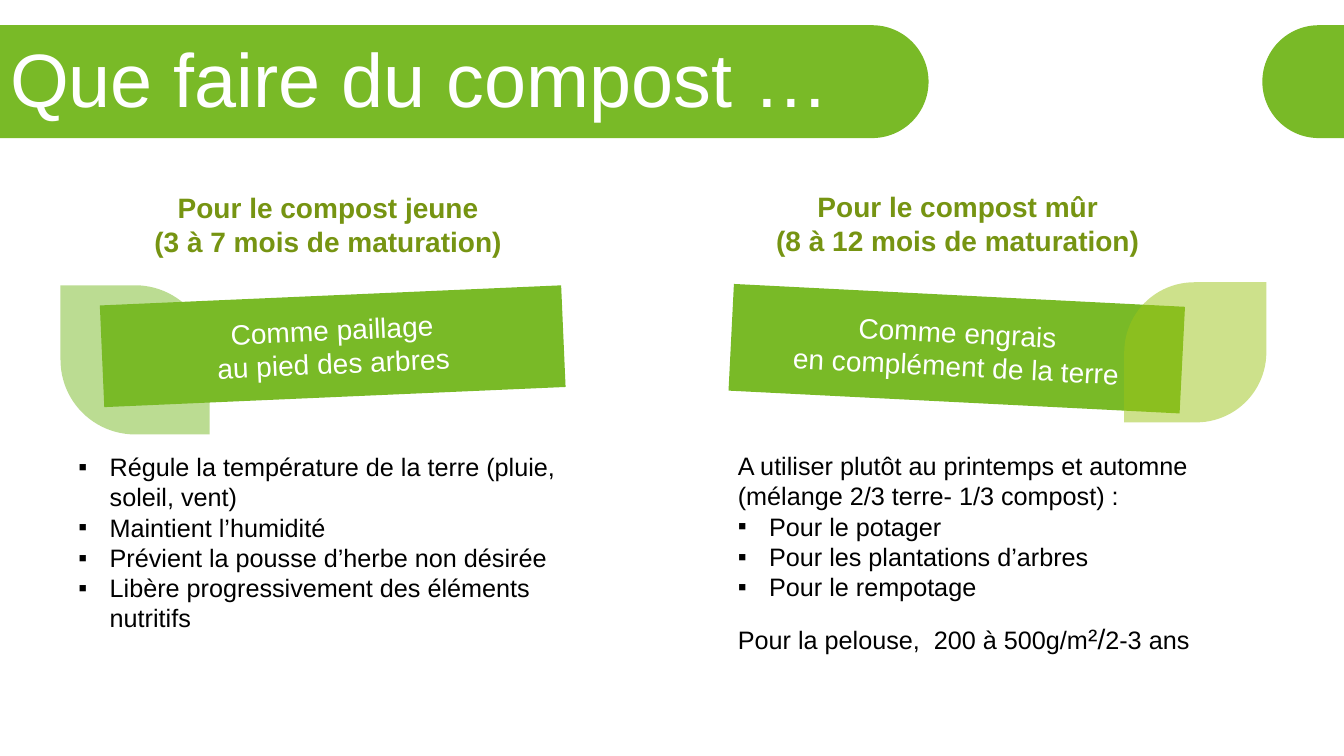
from dataclasses import dataclass
from math import cos, pi, sin

from lxml.etree import SubElement
from pptx import Presentation
from pptx.dml.color import RGBColor
from pptx.enum.shapes import MSO_SHAPE as Preset
from pptx.enum.text import MSO_ANCHOR as Anchor, MSO_AUTO_SIZE as AutoSize, PP_ALIGN as Align
from pptx.oxml.ns import qn
from pptx.util import Inches, Pt


@dataclass(frozen=True)
class Theme:
    """Colours, font and type sizes of the slide."""
    green: str = "79BA27"
    lime: str = "9DC518"
    olive: str = "769412"
    white: str = "FFFFFF"
    black: str = "000000"
    font: str = "Arial"
    title: int = 54
    heading: int = 20
    body: int = 18


THEME = Theme()


def paint(shape, color, opacity=None):
    """Fill a shape without line or shadow, optionally translucent."""
    shape.shadow.inherit = False
    shape.line.fill.background()
    shape.fill.solid()
    shape.fill.fore_color.rgb = RGBColor.from_string(color)
    if opacity:
        color_element = shape.element.spPr.find(qn("a:solidFill"))[0]
        SubElement(color_element, qn("a:alpha"), val=str(opacity * 1000))


def set_bullet(paragraph):
    """Give a paragraph a square bullet and a hanging indent."""
    properties = paragraph._p.get_or_add_pPr()
    properties.set("marL", str(Inches(0.31)))
    properties.set("indent", str(-Inches(0.31)))
    SubElement(properties, qn("a:buFont"), typeface=THEME.font)
    SubElement(properties, qn("a:buChar"), char="▪")


def write(paragraph, text, size=THEME.body, color=THEME.black, bold=False,
          align=Align.LEFT, bullet=False, before=0):
    """Add formatted text to a paragraph."""
    paragraph.alignment = align
    if before:
        paragraph.space_before = Pt(before)
    if bullet:
        set_bullet(paragraph)
    run = paragraph.add_run()
    run.text = text
    run.font.name = THEME.font
    run.font.size = Pt(size)
    run.font.bold = bold
    run.font.color.rgb = RGBColor.from_string(color)


def write_lines(frame, lines, **style):
    """Write one paragraph per line and return the last one."""
    for index, line in enumerate(lines):
        paragraph = frame.add_paragraph() if index else frame.paragraphs[0]
        write(paragraph, line, **style)
    return paragraph


def add_text(slide, left, top, width, height):
    """Add a wrapping text box and return its text frame."""
    frame = slide.shapes.add_textbox(*map(Inches, (left, top, width, height))).text_frame
    frame.word_wrap = True
    return frame


def add_band(slide, flat_x, round_x, top=0.25, height=1.12):
    """Draw a header band from a flat end to a semicircular end."""
    radius = height / 2
    side = 1 if round_x > flat_x else -1
    center_x = round_x - side * radius
    angles = [-pi / 2 + pi * step / 48 for step in range(49)]
    arc = [(Inches(center_x + side * radius * cos(angle)),
            Inches(top + radius + radius * sin(angle))) for angle in angles]
    builder = slide.shapes.build_freeform(Inches(flat_x), Inches(top))
    builder.add_line_segments(arc + [(Inches(flat_x), Inches(top + height))])
    paint(builder.convert_to_shape(), THEME.green)


def add_title(slide, text):
    """Place the title over the header band."""
    title = slide.shapes.title
    title.left, title.top, title.width, title.height = map(Inches, (0, 0.43, 12.33, 0.79))
    title.element.getparent().append(title.element)
    frame = title.text_frame
    frame.auto_size = AutoSize.NONE
    frame.vertical_anchor = Anchor.MIDDLE
    frame.paragraphs[0].line_spacing = 0.9
    write(frame.paragraphs[0], text, size=THEME.title, color=THEME.white)


def add_heading(slide, box, lines):
    """Add a centred column heading."""
    write_lines(add_text(slide, *box), lines, size=THEME.heading,
                color=THEME.olive, bold=True, align=Align.CENTER)


def add_label(slide, box, rotation, lines):
    """Add a tilted green label."""
    label = slide.shapes.add_shape(Preset.RECTANGLE, *map(Inches, box))
    label.rotation = rotation
    paint(label, THEME.green)
    label.text_frame.word_wrap = True
    label.text_frame.vertical_anchor = Anchor.MIDDLE
    write_lines(label.text_frame, lines, size=THEME.heading,
                color=THEME.white, align=Align.CENTER)


def add_leaf(slide, box, color, corners):
    """Add a translucent leaf with two opposite round corners."""
    leaf = slide.shapes.add_shape(Preset.ROUND_2_DIAG_RECTANGLE, *map(Inches, box))
    leaf.adjustments[0], leaf.adjustments[1] = corners
    paint(leaf, color, opacity=50)


def main():
    """Build and save the slide."""
    presentation = Presentation()
    presentation.slide_width, presentation.slide_height = Inches(13.33), Inches(7.5)
    slide = presentation.slides.add_slide(presentation.slide_layouts[5])

    add_band(slide, 0, 9.21)
    add_band(slide, 13.33, 12.52)
    add_title(slide, "Que faire du compost …")

    add_heading(slide, (0.44, 1.84, 5.63, 0.77),
                ["Pour le compost jeune", "(3 à 7 mois de maturation)"])
    add_label(slide, (1.01, 2.93, 4.58, 1.01), 357.5,
              ["Comme paillage", "au pied des arbres"])
    add_leaf(slide, (0.6, 2.83, 1.48, 1.48), THEME.green, (0, 0.5))
    write_lines(add_text(slide, 0.68, 4.43, 5.44, 1.92), [
        "Régule la température de la terre (pluie, soleil, vent)",
        "Maintient l’humidité",
        "Prévient la pousse d’herbe non désirée",
        "Libère progressivement des éléments nutritifs",
    ], bullet=True)

    add_heading(slide, (6.67, 1.83, 5.66, 0.77),
                ["Pour le compost mûr", "(8 à 12 mois de maturation)"])
    add_label(slide, (7.25, 2.93, 4.48, 1.06), 2.9,
              ["Comme engrais", "en complément de la terre"])
    add_leaf(slide, (11.15, 2.8, 1.41, 1.39), THEME.lime, (0.5, 0))
    advice = add_text(slide, 7.22, 4.42, 5.13, 2.46)
    write(advice.paragraphs[0],
          "A utiliser plutôt au printemps et automne (mélange 2/3 terre- 1/3 compost) :")
    for use in ("Pour le potager", "Pour les plantations d’arbres", "Pour le rempotage"):
        write(advice.add_paragraph(), use, bullet=True)
    lawn = advice.add_paragraph()
    write(lawn, "Pour la pelouse,  200 à 500g/m", before=14)
    write(lawn, "²/", size=THEME.heading)
    write(lawn, "2-3 ans")

    presentation.save("out.pptx")


if __name__ == "__main__":
    main()
